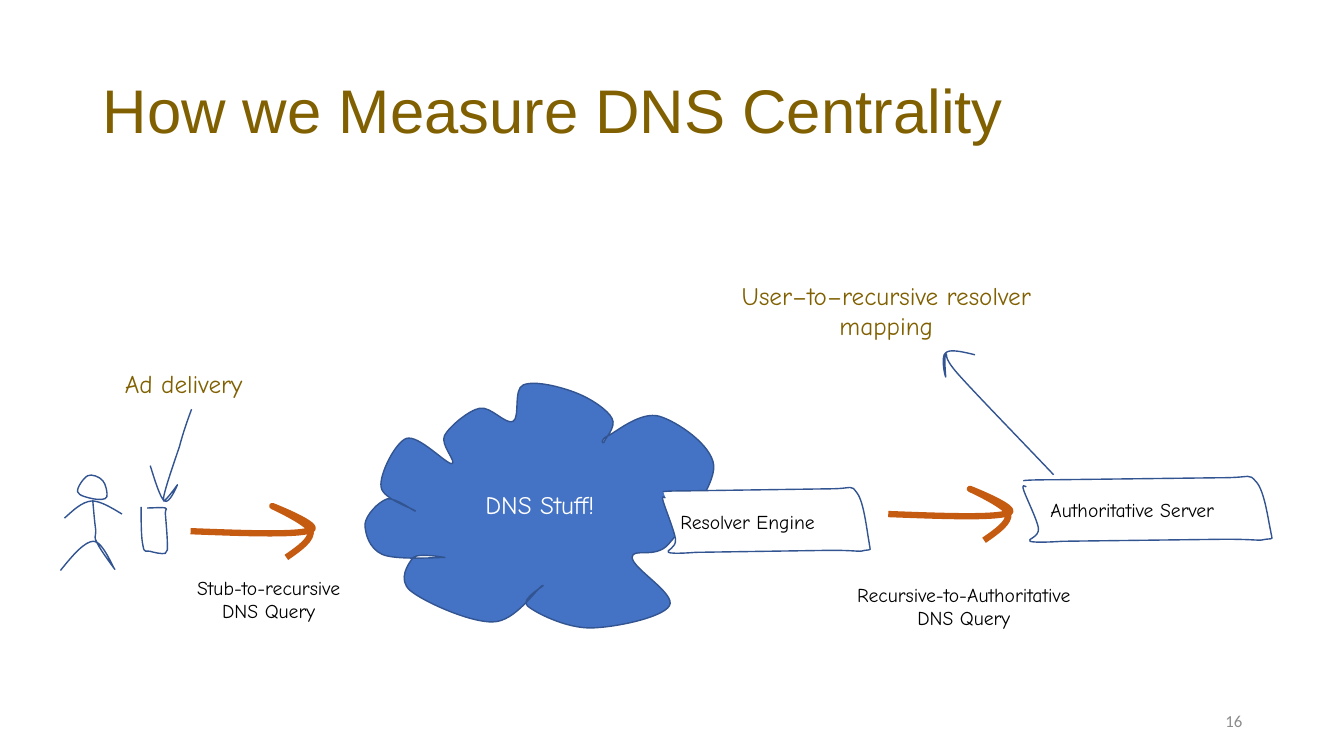
from dataclasses import dataclass

from pptx import Presentation
from pptx.dml.color import RGBColor
from pptx.enum.text import MSO_ANCHOR, PP_ALIGN
from pptx.oxml.ns import qn
from pptx.oxml.xmlchemy import OxmlElement
from pptx.util import Cm, Pt


@dataclass(frozen=True)
class Theme:
    gold: str = "806000"
    blue: str = "4472C4"
    outline: str = "325491"
    orange: str = "C55A11"
    black: str = "000000"
    white: str = "FFFFFF"
    grey: str = "8C8C8C"
    title_font: str = "Arial"
    hand_font: str = "Comic Neue"
    number_font: str = "Calibri"
    title_size: int = 44
    label_size: int = 18
    note_size: int = 14
    number_size: int = 12
    thin: float = 1
    thick: float = 4.5


# Outlines in inches: a start point, then lines (x, y) or cubic curves (x1, y1, x2, y2, x, y)
CLOUD = [
    (4.48, 4.6), (4.42, 4.6, 4.15, 4.31, 4.03, 4.35), (3.92, 4.39, 3.76, 4.71, 3.78, 4.83),
    (3.79, 4.95, 4.11, 5.05, 4.12, 5.07), (4.13, 5.09, 3.92, 4.93, 3.84, 4.95),
    (3.75, 4.98, 3.63, 5.11, 3.62, 5.2), (3.62, 5.29, 3.66, 5.44, 3.79, 5.5),
    (3.92, 5.56, 4.36, 5.53, 4.41, 5.53), (4.46, 5.54, 4.16, 5.48, 4.1, 5.53),
    (4.05, 5.59, 3.94, 5.75, 4.07, 5.86), (4.2, 5.97, 4.67, 6.18, 4.89, 6.17),
    (5.11, 6.17, 5.32, 5.84, 5.38, 5.81), (5.44, 5.79, 5.15, 5.94, 5.23, 6.01),
    (5.31, 6.08, 5.61, 6.23, 5.85, 6.23), (6.08, 6.23, 6.57, 6.13, 6.64, 6.01),
    (6.71, 5.89, 6.27, 5.64, 6.27, 5.53), (6.27, 5.43, 6.5, 5.55, 6.63, 5.4),
    (6.77, 5.24, 7.09, 4.83, 7.08, 4.62), (7.06, 4.41, 6.71, 4.18, 6.54, 4.13),
    (6.36, 4.08, 6.13, 4.27, 6.04, 4.32), (5.94, 4.36, 5.98, 4.41, 5.99, 4.39),
    (5.99, 4.36, 6.12, 4.24, 6.07, 4.15), (6.03, 4.07, 5.87, 3.96, 5.72, 3.9),
    (5.57, 3.84, 5.3, 3.77, 5.19, 3.82), (5.09, 3.86, 5.16, 4.14, 5.09, 4.18),
    (5.02, 4.22, 4.87, 4.03, 4.76, 4.05), (4.65, 4.07, 4.46, 4.23, 4.41, 4.32),
    (4.36, 4.41, 4.54, 4.59, 4.48, 4.6),
]
HEAD = [
    (0.93, 4.95), (0.98, 4.96, 1.05, 4.96, 1.06, 4.93), (1.07, 4.9, 1.05, 4.8, 1.02, 4.77),
    (0.99, 4.73, 0.91, 4.7, 0.87, 4.72), (0.83, 4.74, 0.76, 4.84, 0.77, 4.88),
    (0.78, 4.92, 0.88, 4.94, 0.93, 4.95),
]
BODY_AND_LEGS = [
    (0.92, 4.96), (0.93, 5.08, 0.94, 5.19, 0.95, 5.26), (0.95, 5.34, 0.93, 5.32, 0.96, 5.38),
    (0.99, 5.45, 1.14, 5.65, 1.14, 5.65), (1.13, 5.65, 1.02, 5.37, 0.93, 5.37),
    (0.84, 5.37, 0.72, 5.51, 0.6, 5.66),
]
ARMS = [(0.64, 5.14), (0.73, 5.06, 0.81, 4.98, 0.91, 4.97), (1, 4.97, 1.11, 5.04, 1.21, 5.1)]
DEVICE = [
    (1.4, 5.03), (1.4, 5.19, 1.4, 5.34, 1.42, 5.42), (1.43, 5.49, 1.45, 5.46, 1.49, 5.47),
    (1.52, 5.48, 1.61, 5.5, 1.64, 5.49), (1.67, 5.47, 1.66, 5.45, 1.66, 5.38),
    (1.66, 5.32, 1.64, 5.09, 1.64, 5.09), (1.64, 5.04, 1.67, 5.05, 1.64, 5.04),
    (1.61, 5.03, 1.54, 5.04, 1.46, 5.04),
]
QUERY_ARROW = [
    (1.89, 5.27), (2.42, 5.29, 2.94, 5.31, 3.08, 5.26), (3.21, 5.22, 2.7, 5.02, 2.7, 5.02),
    (2.7, 5.02, 3.05, 5.18, 3.08, 5.26), (3.1, 5.35, 2.97, 5.44, 2.84, 5.53),
]
SERVER_BOX = [
    (6.6, 4.94), (6.58, 4.93, 6.56, 4.91, 6.58, 4.98), (6.6, 5.05, 6.69, 5.27, 6.7, 5.35),
    (6.71, 5.44, 6.6, 5.46, 6.63, 5.48), (6.67, 5.5, 6.9, 5.48, 6.9, 5.48), (8.24, 5.46),
    (8.52, 5.46, 8.52, 5.48, 8.58, 5.46), (8.65, 5.45, 8.63, 5.47, 8.62, 5.38),
    (8.6, 5.28, 8.57, 4.98, 8.5, 4.89), (8.43, 4.8, 8.48, 4.85, 8.21, 4.85), (6.84, 4.87),
    (6.57, 4.87, 6.57, 4.88, 6.58, 4.88),
]
DELIVERY_ARROW = [
    (1.9, 4.06), (1.86, 4.17, 1.82, 4.28, 1.78, 4.43), (1.73, 4.58, 1.62, 4.89, 1.62, 4.96),
    (1.61, 5.02, 1.76, 4.81, 1.76, 4.81), (1.76, 4.81, 1.68, 5.01, 1.63, 4.97),
    (1.59, 4.94, 1.54, 4.78, 1.49, 4.62),
]
MAPPING_ARROW = [
    (10.45, 4.71), (10.07, 4.31, 9.69, 3.92, 9.51, 3.72), (9.33, 3.52, 9.41, 3.51, 9.38, 3.51),
    (9.36, 3.52, 9.38, 3.74, 9.38, 3.74), (9.37, 3.73, 9.33, 3.53, 9.38, 3.5),
    (9.42, 3.46, 9.55, 3.49, 9.67, 3.52),
]


def length(inches):
    return Cm(inches * 2.54)


def bend(shape, outline):
    """Turn each three line segments that stand for a curve into one cubic curve."""
    lines = iter(list(shape.element.iter(qn("a:lnTo"))))
    for segment in outline[1:]:
        group = [next(lines) for _ in range(len(segment) // 2)]
        if len(group) == 3:
            curve = OxmlElement("a:cubicBezTo")
            group[0].addprevious(curve)
            for line in group:
                curve.append(line[0])
                line.getparent().remove(line)


def write_text(frame, text, *, size, color, font, align=PP_ALIGN.LEFT,
               anchor=MSO_ANCHOR.TOP, spacing=None):
    frame.word_wrap = True
    frame.vertical_anchor = anchor
    for index, line in enumerate(text.split("\n")):
        paragraph = frame.add_paragraph() if index else frame.paragraphs[0]
        paragraph.alignment = align
        paragraph.line_spacing = spacing
        run = paragraph.add_run()
        run.text = line
        run.font.name = font
        run.font.size = Pt(size)
        run.font.color.rgb = RGBColor.from_string(color)


class SlideBuilder:
    def __init__(self, slide, theme):
        self.slide = slide
        self.theme = theme

    def label(self, text, left, top, width, height, **text_format):
        shape = self.slide.shapes.add_textbox(*map(length, (left, top, width, height)))
        defaults = dict(size=self.theme.note_size, color=self.theme.black, font=self.theme.hand_font)
        write_text(shape.text_frame, text, **{**defaults, **text_format})

    def sketch(self, outline, *, fill=None, line=None, weight=None, closed=False,
               shift=(0, 0), stretch=1):
        """Draw an outline, shifted and widened from its start point."""
        origin = outline[0][0]
        points = [(length(origin + (x - origin) * stretch + shift[0]), length(y + shift[1]))
                  for segment in outline for x, y in zip(segment[::2], segment[1::2])]
        builder = self.slide.shapes.build_freeform(*points[0])
        builder.add_line_segments(points[1:], close=closed)
        shape = builder.convert_to_shape()
        bend(shape, outline)
        shape.shadow.inherit = False
        if fill:
            shape.fill.solid()
            shape.fill.fore_color.rgb = RGBColor.from_string(fill)
        else:
            shape.fill.background()
        shape.line.color.rgb = RGBColor.from_string(line or self.theme.outline)
        shape.line.width = Pt(weight or self.theme.thin)
        return shape


def main():
    theme = Theme()
    presentation = Presentation()
    presentation.slide_width = length(13.33)
    presentation.slide_height = length(7.5)
    builder = SlideBuilder(presentation.slides.add_slide(presentation.slide_layouts[6]), theme)
    center, middle = PP_ALIGN.CENTER, MSO_ANCHOR.MIDDLE
    highlight = dict(size=theme.label_size, color=theme.gold)
    query_arrow = dict(line=theme.orange, weight=theme.thick)

    # Title and slide number
    builder.label("How we Measure DNS Centrality", 0.92, 0.4, 11.5, 1.45, size=theme.title_size,
                  color=theme.gold, font=theme.title_font, anchor=middle, spacing=0.9)
    builder.label("16", 9.42, 6.95, 3, 0.4, size=theme.number_size, color=theme.grey,
                  font=theme.number_font, align=PP_ALIGN.RIGHT, anchor=middle)

    # DNS cloud
    cloud = builder.sketch(CLOUD, fill=theme.blue, closed=True)
    write_text(cloud.text_frame, "DNS Stuff!", size=theme.label_size, color=theme.white,
               font=theme.hand_font, align=center, anchor=middle)

    # User and device
    builder.sketch(HEAD, closed=True)
    for outline in (BODY_AND_LEGS, ARMS, DEVICE):
        builder.sketch(outline)

    # Query from the user to the resolver
    builder.sketch(QUERY_ARROW, **query_arrow)
    builder.label("Stub-to-recursive\nDNS Query", 1.66, 5.66, 2.01, 0.57, align=center)
    builder.sketch(SERVER_BOX, fill=theme.white)
    builder.label("Resolver Engine", 6.65, 5.01, 1.86, 0.34)

    # Query from the resolver to the authoritative server
    builder.sketch(QUERY_ARROW, shift=(6.92, -0.17), **query_arrow)
    builder.label("Recursive-to-Authoritative\nDNS Query", 8.11, 5.73, 2.9, 0.57, align=center)
    builder.sketch(SERVER_BOX, fill=theme.white, shift=(3.58, -0.11), stretch=1.2)
    builder.label("Authoritative Server", 10.32, 4.89, 2.3, 0.34)

    # Measurement points
    builder.label("Ad delivery", 1.14, 3.6, 1.63, 0.4, **highlight)
    builder.sketch(DELIVERY_ARROW)
    builder.label("User–to–recursive resolver\nmapping", 6.97, 2.73, 3.64, 0.71,
                  align=center, **highlight)
    builder.sketch(MAPPING_ARROW)

    presentation.save("out.pptx")


if __name__ == "__main__":
    main()
